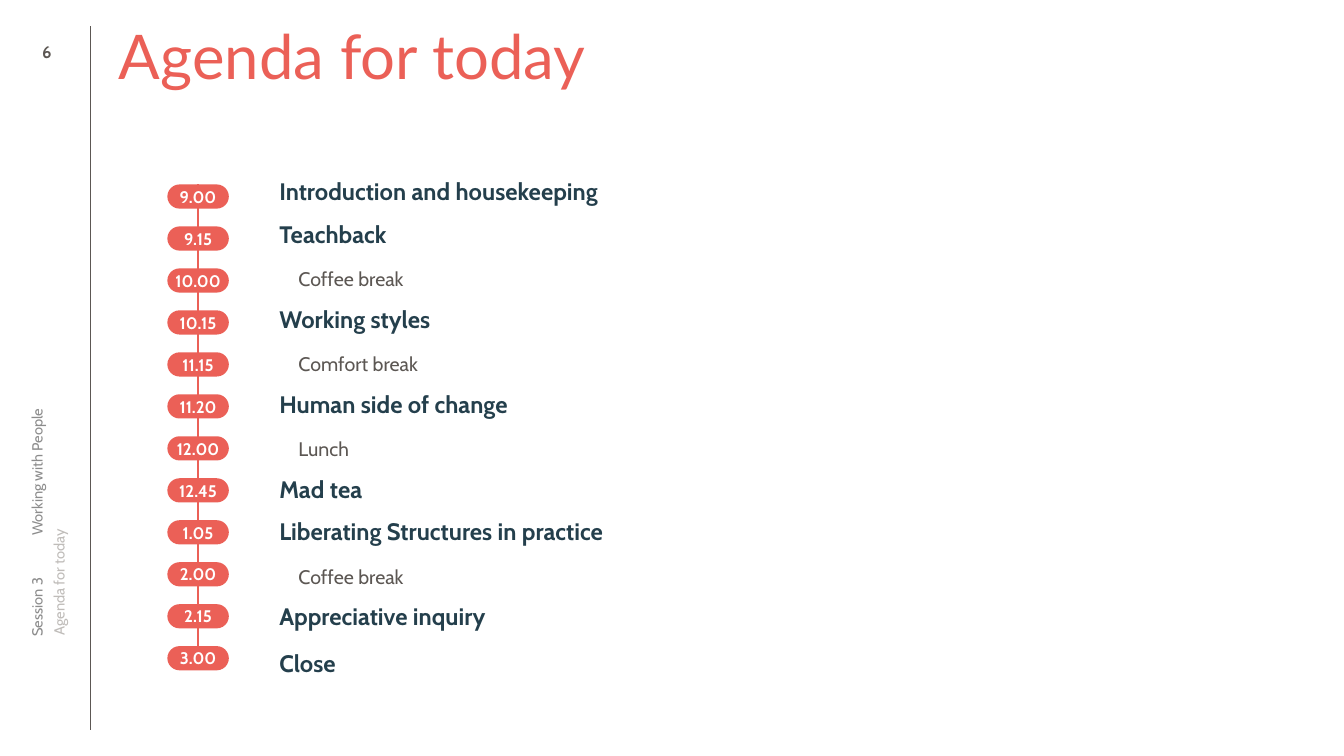
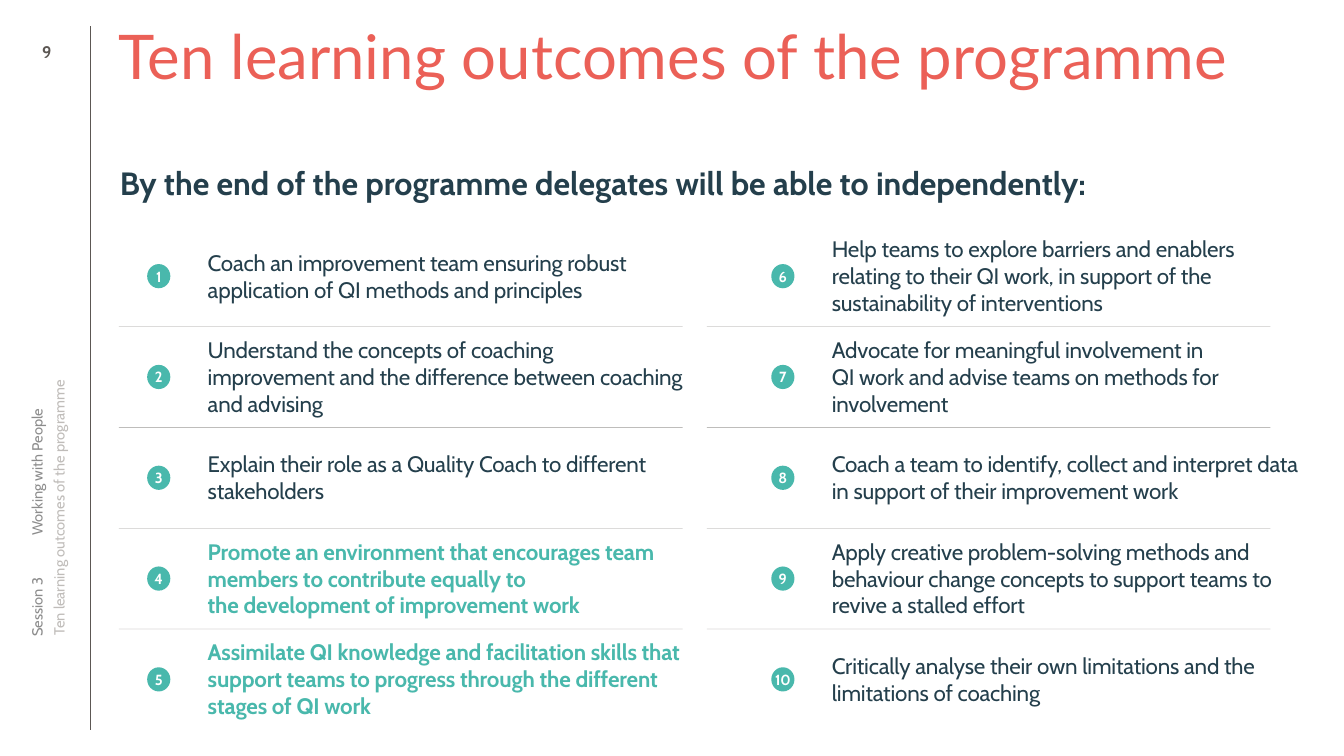
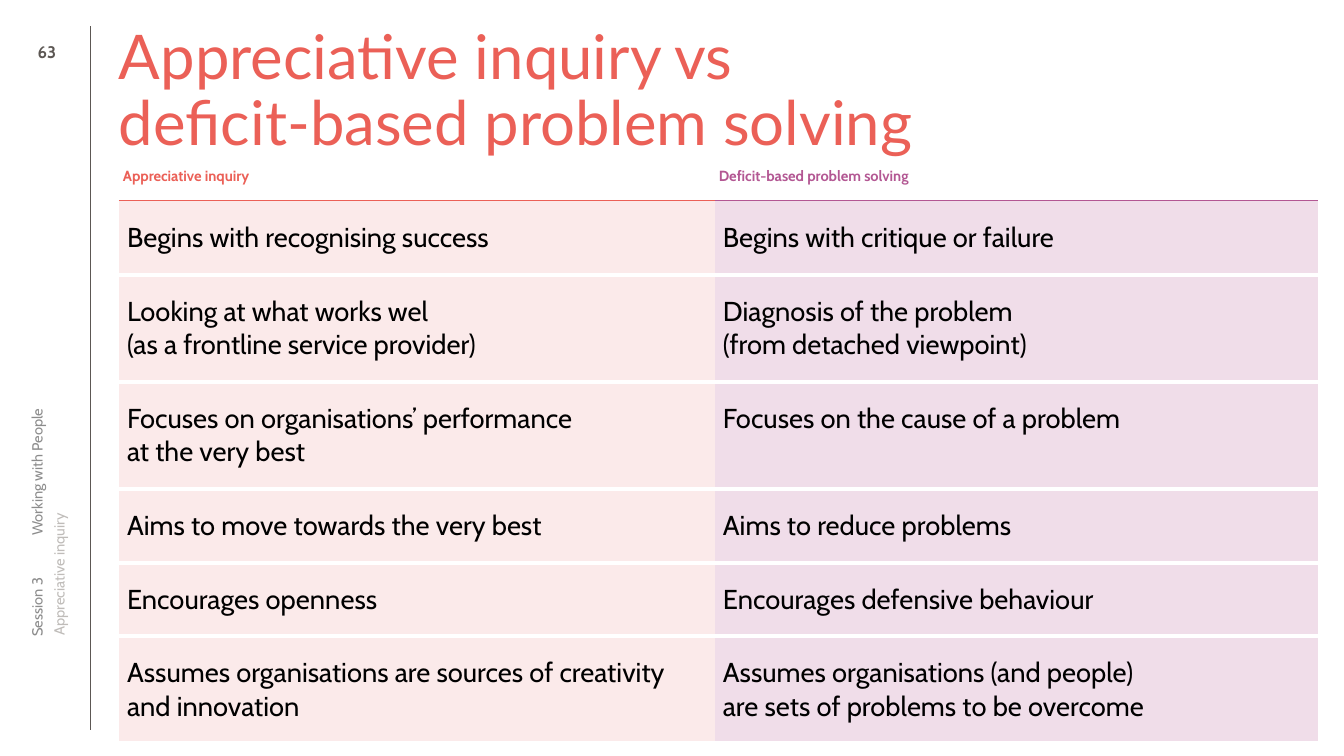
from copy import deepcopy

from lxml.etree import SubElement
from pptx import Presentation
from pptx.dml.color import RGBColor
from pptx.enum.shapes import MSO_CONNECTOR, MSO_SHAPE
from pptx.enum.text import MSO_ANCHOR, MSO_AUTO_SIZE, PP_ALIGN
from pptx.oxml.ns import qn
from pptx.util import Inches, Pt

HUES = {
    "coral": "EB6057", "navy": "243F4C", "teal": "49B8AC", "plum": "B35793",
    "grey": "5C5753", "mid": "8C8C8C", "pale": "BFBCB9", "white": "FFFFFF",
    "black": "000000", "blush": "FBEAEA", "lilac": "F0DDE9",
}
LOOKS = {
    "title": ("Lato", 44, False, "coral"),
    "head": ("Cabin", 23, True, "navy"),
    "topic": ("Cabin", 17, True, "navy"),
    "break": ("Cabin", 14, False, "grey"),
    "goal": ("Cabin", 16, False, "navy"),
    "focus": ("Cabin", 16, True, "teal"),
    "time": ("Cabin", 12, True, "white"),
    "count": ("Cabin", 10.5, True, "white"),
    "page": ("Cabin", 12, True, "grey"),
    "part": ("Cabin", 10.5, False, "mid"),
    "label": ("Cabin", 10.5, False, "pale"),
    "left": ("Cabin", 10.5, True, "coral"),
    "right": ("Cabin", 10.5, True, "plum"),
    "cell": ("Cabin", 19.5, False, "black"),
}
EDGES = ("margin_left", "margin_top", "margin_right", "margin_bottom")
NO_STYLE = "{2D5ABB26-0587-4C30-8999-92F81FD0307C}"

AGENDA = [
    ("9.00", "Introduction and housekeeping", "topic"),
    ("9.15", "Teachback", "topic"),
    ("10.00", "Coffee break", "break"),
    ("10.15", "Working styles", "topic"),
    ("11.15", "Comfort break", "break"),
    ("11.20", "Human side of change", "topic"),
    ("12.00", "Lunch", "break"),
    ("12.45", "Mad tea", "topic"),
    ("1.05", "Liberating Structures in practice", "topic"),
    ("2.00", "Coffee break", "break"),
    ("2.15", "Appreciative inquiry", "topic"),
    ("3.00", "Close", "topic"),
]
GOALS = [
    "Coach an improvement team ensuring robust application of QI methods and principles",
    "Understand the concepts of coaching improvement and the difference between coaching and advising",
    "Explain their role as a Quality Coach to different stakeholders",
    "Promote an environment that encourages team members to contribute equally to\nthe development of improvement work",
    "Assimilate QI knowledge and facilitation skills that support teams to progress through the different stages of QI work",
    "Help teams to explore barriers and enablers relating to their QI work, in support of the sustainability of interventions",
    "Advocate for meaningful involvement in\nQI work and advise teams on methods for involvement",
    "Coach a team to identify, collect and interpret data in support of their improvement work",
    "Apply creative problem-solving methods and behaviour change concepts to support teams to revive a stalled effort",
    "Critically analyse their own limitations and the limitations of coaching",
]
FOCUS = (4, 5)
VIEWS = [
    ("Appreciative inquiry", "Deficit-based problem solving"),
    ("Begins with recognising success", "Begins with critique or failure"),
    ("Looking at what works wel\n(as a frontline service provider)",
     "Diagnosis of the problem\n(from detached viewpoint)"),
    ("Focuses on organisations’ performance\nat the very best",
     "Focuses on the cause of a problem"),
    ("Aims to move towards the very best", "Aims to reduce problems"),
    ("Encourages openness", "Encourages defensive behaviour"),
    ("Assumes organisations are sources of creativity and innovation",
     "Assumes organisations (and people)\nare sets of problems to be overcome"),
]


def rgb(hue):
    """Return the named colour."""
    return RGBColor.from_string(HUES[hue])


def put(item, form):
    """Set attributes from a dict of format values."""
    for key, val in form.items():
        setattr(item, key, val)


def inset(item, sides):
    """Set left, top, right and bottom margins in inches."""
    put(item, dict(zip(EDGES, map(Inches, sides))))


def place(shape, at):
    """Move and size a shape in inches."""
    put(shape, dict(zip(("left", "top", "width", "height"), map(Inches, at))))


def write(par, text, look, track=0, **form):
    """Fill one paragraph with styled text."""
    face, size, bold, hue = LOOKS[look]
    par.text = text
    put(par, {"space_before": Pt(0), "space_after": Pt(0), **form})
    for run in par.runs:
        put(run.font, {"name": face, "size": Pt(size), "bold": bold})
        run.font.color.rgb = rgb(hue)
        if track:
            run.font._element.set("spc", str(track))
    for gap in par._p.findall(qn("a:br")):
        gap.append(deepcopy(par.runs[0].font._element))


def plain(par, left=0.0, tab=None):
    """Remove the bullet and set the indent and tab stop."""
    prop = par._p.get_or_add_pPr()
    prop.set("marL", str(Inches(left)))
    prop.set("indent", "0")
    SubElement(prop, qn("a:buNone"))
    if tab:
        stops = SubElement(prop, qn("a:tabLst"))
        SubElement(stops, qn("a:tab"), pos=str(Inches(tab)), algn="l")


def frame(shape, sides=(0, 0, 0, 0), anchor=MSO_ANCHOR.TOP, wrap=True):
    """Set up a text frame and return it."""
    body = shape.text_frame
    put(body, {"word_wrap": wrap, "auto_size": MSO_AUTO_SIZE.NONE,
               "vertical_anchor": anchor})
    inset(body, sides)
    return body


def box(slide, at, text, look, sides=(0, 0, 0, 0), **form):
    """Add a text box with its text in the middle."""
    shape = slide.shapes.add_textbox(*map(Inches, at))
    par = frame(shape, sides, MSO_ANCHOR.MIDDLE).paragraphs[0]
    write(par, text, look, **form)
    return shape


def badge(slide, kind, at, text, look, hue):
    """Add a filled shape with a short centred text."""
    shape = slide.shapes.add_shape(kind, *map(Inches, at))
    shape.shadow.inherit = False
    shape.fill.solid()
    shape.fill.fore_color.rgb = rgb(hue)
    shape.line.fill.background()
    par = frame(shape, anchor=MSO_ANCHOR.MIDDLE, wrap=False).paragraphs[0]
    write(par, text, look, alignment=PP_ALIGN.CENTER)
    return shape


def rule(slide, ends, hue, width, alpha=None):
    """Add a straight line."""
    line = slide.shapes.add_connector(MSO_CONNECTOR.STRAIGHT, *map(Inches, ends))
    line.line.width = Pt(width)
    line.line.color.rgb = rgb(hue)
    SubElement(line._element.spPr, qn("a:effectLst"))
    if alpha:
        tone = line._element.spPr.find(".//" + qn("a:srgbClr"))
        SubElement(tone, qn("a:alpha"), val=str(alpha * 1000))


def begin(deck, layout, page, title, label):
    """Add a slide with the shared title, side text and margin line."""
    slide = deck.slides.add_slide(deck.slide_layouts[layout])
    rule(slide, (0.89, 7.24, 0.89, 0.26), "grey", 0.25)
    head = slide.shapes.title
    place(head, (1.18, 0.26, 11.89, 1.25))
    write(frame(head).paragraphs[0], title, "title",
          line_spacing=0.9, alignment=PP_ALIGN.LEFT)
    part = box(slide, (-1.96, 3.89, 4.65, 0.2),
               "Session 3\tWorking with People", "part")
    plain(part.text_frame.paragraphs[0], tab=0.75)
    box(slide, (0.26, 0.26, 0.41, 0.51), str(page), "page",
        alignment=PP_ALIGN.CENTER)
    side = list(slide.placeholders)[-1]
    place(side, (-1.73, 3.91, 4.64, 0.15))
    par = frame(side).paragraphs[0]
    plain(par)
    write(par, label, "label", line_spacing=0.9)
    part.rotation = side.rotation = 270
    return slide


def agenda(deck):
    """Build the timed agenda."""
    title = "Agenda for today"
    slide = begin(deck, 3, 6, title, title)
    top, step = 1.83, 0.4164
    rule(slide, (1.96, top, 1.96, 6.65), "coral", 1.5)
    body = slide.placeholders[1]
    place(body, (2.76, 1.81, 10.31, 5.35))
    text = frame(body)
    for row, (time, topic, look) in enumerate(AGENDA):
        pill = badge(slide, MSO_SHAPE.ROUNDED_RECTANGLE,
                     (1.66, top + row * step, 0.61, 0.24), time, "time", "coral")
        pill.adjustments[0] = 0.5
        par = text.add_paragraph() if row else text.paragraphs[0]
        rest = look == "break"
        plain(par, 0.2 if rest else 0.01)
        wide = rest or topic == "Close"
        lead = (15 if wide else 12) if row else 0
        write(par, topic, look, line_spacing=0.8,
              space_before=Pt(lead), space_after=Pt(2))


def goals(deck):
    """Build the two columns of numbered outcomes."""
    title = "Ten learning outcomes of the programme"
    slide = begin(deck, 3, 9, title, title)
    body = slide.placeholders[1]
    place(body, (1.18, 1.66, 11.89, 0.5))
    par = frame(body).paragraphs[0]
    plain(par, 0.01)
    write(par, "By the end of the programme delegates will be able to independently:",
          "head", line_spacing=0.9)
    for spot, goal in enumerate(GOALS):
        col, row = divmod(spot, 5)
        left, top = 1.19 + col * 6.19, 2.24 + row
        look = "focus" if spot + 1 in FOCUS else "goal"
        box(slide, (left, top, 5.69, 0.99), goal, look,
            (0.87, 0, 0.1, 0), track=-10)
        badge(slide, MSO_SHAPE.OVAL, (left + 0.27, top + 0.38, 0.23, 0.24),
              str(spot + 1), "count", "teal")
        if row:
            start = 1.18 + col * 5.83
            rule(slide, (start, top, start + 5.59, top), "grey", 0.25, 60)


def border(cell, side, hue, width):
    """Draw one edge of a table cell."""
    prop = cell._tc.get_or_add_tcPr()
    edge = SubElement(prop, qn("a:" + side), w=str(Pt(width)))
    fill = SubElement(edge, qn("a:solidFill"))
    SubElement(fill, qn("a:srgbClr"), val=HUES[hue])


def views(deck):
    """Build the table that compares the two views."""
    slide = begin(deck, 1, 63, "Appreciative inquiry vs\ndeficit-based problem solving",
                  "Appreciative inquiry")
    place_at = map(Inches, (1.18, 1.66, 11.89, 5.58))
    table = slide.shapes.add_table(len(VIEWS), 2, *place_at).table
    put(table, {"first_row": False, "horz_banding": False})
    table._tbl.tblPr.find(qn("a:tableStyleId")).text = NO_STYLE
    for col, wide in zip(table.columns, (5.91, 5.98)):
        col.width = Inches(wide)
    for row, high in zip(table.rows, (0.33, 0.74, 1.03, 1.03, 0.71, 0.71, 1.03)):
        row.height = Inches(high)
    tones = (("left", "coral", "blush"), ("right", "plum", "lilac"))
    for row, pair in enumerate(VIEWS):
        for col, (text, (head, hue, tint)) in enumerate(zip(pair, tones)):
            cell = table.cell(row, col)
            inset(cell, (0.08, 0.2, 0.04, 0.2) if row else (0.04, 0, 0.1, 0.04))
            write(cell.text_frame.paragraphs[0], text, "cell" if row else head)
            if row == 1:
                border(cell, "lnT", hue, 1.5)
            else:
                border(cell, "lnT", "white", 3 if row else 1)
            border(cell, "lnB", *(("white", 3) if row else (hue, 1.5)))
            if row:
                cell.fill.solid()
                cell.fill.fore_color.rgb = rgb(tint)
            else:
                cell.fill.background()


def main():
    """Build and save the slides."""
    deck = Presentation()
    put(deck, {"slide_width": Inches(13.33), "slide_height": Inches(7.5)})
    for build in (agenda, goals, views):
        build(deck)
    deck.save("out.pptx")


if __name__ == "__main__":
    main()
